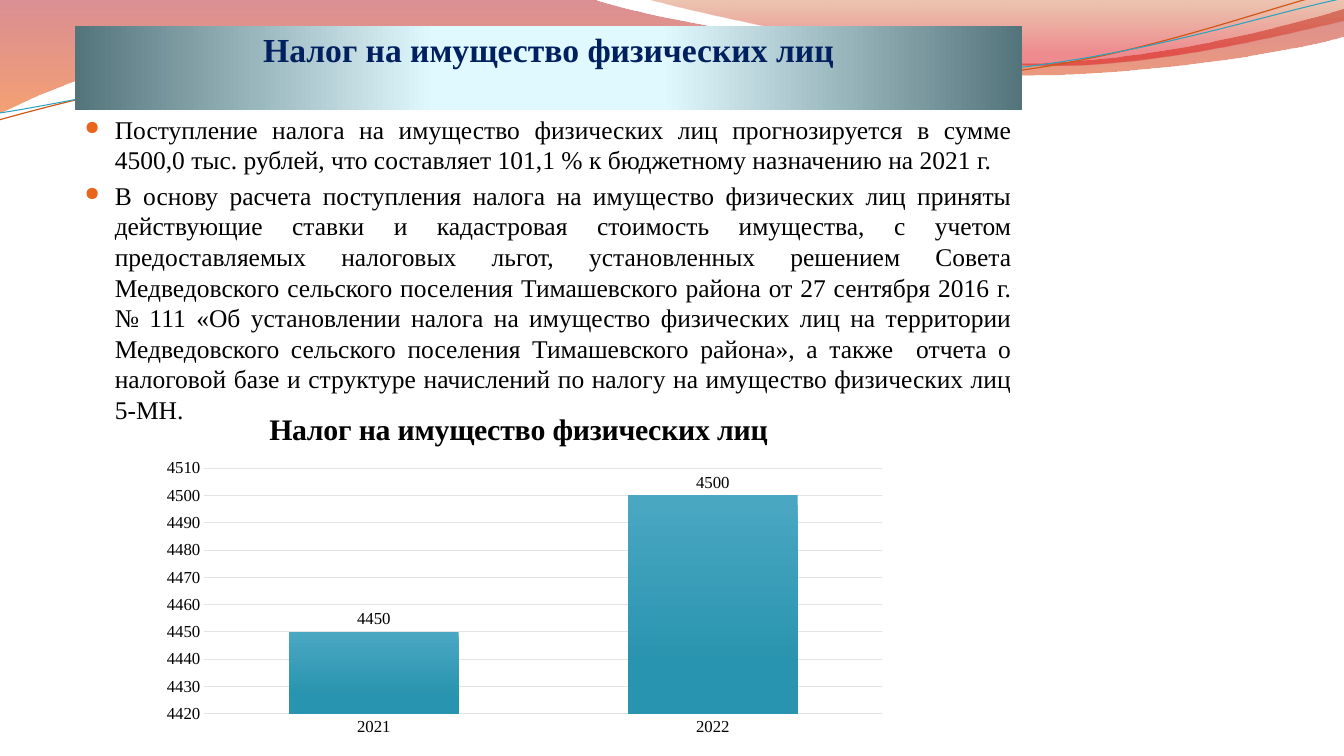
import math
from lxml import etree
from pptx import Presentation
from pptx import util as u
from pptx.chart.data import CategoryChartData
from pptx.dml.color import RGBColor
from pptx.enum import chart as charts, shapes, text
from pptx.oxml.ns import qn

COLORS = {
    "navy": "002060", "black": "000000", "bullet": "EB641B", "grid": "E3E3E3",
    "orange line": "CF5818", "teal line": "2DA2BF",
    "red": "AF0911", "orange": "EE5300", "rust": "C24400", "scarlet": "DC000B",
    "band edge": "54747B", "band middle": "E0F9FF",
    "bar top": "4AA7C2", "bar bottom": "2994AF",
}
FONT = "Times New Roman"
TITLE = "Налог на имущество физических лиц"


def style_font(font, size, color="black", bold=False):
    font.name, font.size, font.bold = FONT, u.Pt(size), bold
    font.color.rgb = RGBColor.from_string(COLORS[color])


def fill_gradient(fill, element, stops, angle):
    """Fill with (position %, colour name, opacity %) stops; element holds the fill."""
    fill.gradient()
    fill.gradient_angle = angle
    stop_list = element.find(".//" + qn("a:gsLst"))
    for stop in list(stop_list):
        stop_list.remove(stop)
    for position, color, opacity in stops:
        stop = etree.SubElement(stop_list, qn("a:gs"), pos=str(position * 1000))
        rgb = etree.SubElement(stop, qn("a:srgbClr"), val=COLORS[color])
        if opacity < 100:
            etree.SubElement(rgb, qn("a:alpha"), val=str(opacity * 1000))


presentation = Presentation()
presentation.slide_width = u.Inches(13.33)
presentation.slide_height = u.Inches(7.5)
column = presentation.slide_width / 13.33
row = presentation.slide_height / 7.5
slide = presentation.slides.add_slide(presentation.slide_layouts[6])

# Waves: start, segments (one point is a line, three a cubic curve), gradient, outline.
waves = [
    ((0, 0), [[(5.87, -0.01)], [(6.34, 0.17), (8.85, 0.63), (10.11, 0.63)],
              [(11.38, 0.63), (12.78, 0.26), (13.33, 0.09)], [(13.35, 0.36)],
              [(13.11, 0.44), (11.6, 0.76), (9.94, 0.75)],
              [(8.29, 0.75), (5.09, 0.28), (3.43, 0.34)],
              [(1.72, 0.36), (0.61, 0.83), (-0.01, 1.13)]],
     [(0, "red", 45), (100, "orange", 55)], None),
    ((6.39, -0.01), [[(6.79, 0.11), (9.09, 0.62), (10.25, 0.65)],
                     [(11.41, 0.69), (12.82, 0.32), (13.33, 0.21)], [(13.33, 0)]],
     [(0, "rust", 30), (80, "scarlet", 45)], None),
    ((-0.01, 1.19), [[(0.64, 1.01), (2.11, 0.62), (3.69, 0.55)],
                     [(5.27, 0.48), (7.9, 0.87), (9.5, 0.76)],
                     [(11.1, 0.66), (12.52, 0.08), (13.31, -0.1)]],
     None, ("orange line", 0.85)),
    ((0, 1.12), [[(0.63, 1.03), (2.18, 0.66), (3.78, 0.59)],
                 [(5.37, 0.53), (7.96, 0.82), (9.55, 0.72)],
                 [(11.15, 0.62), (12.55, 0.14), (13.34, -0.02)]],
     None, ("teal line", 0.75)),
]
center_x, center_y = 6.66, 0.58
for start, segments, stops, outline in waves:
    tilt = 0 if stops else 2.7
    cosine, sine = math.cos(math.radians(tilt)), math.sin(math.radians(tilt))
    start, *segments = [
        [(int((center_x + (x - center_x) * cosine - (y - center_y) * sine) * column),
          int((center_y + (x - center_x) * sine + (y - center_y) * cosine) * row))
         for x, y in points] for points in [[start], *segments]]
    builder = slide.shapes.build_freeform(*start[0])
    builder.add_line_segments([points[-1] for points in segments], close=stops is not None)
    wave = builder.convert_to_shape()
    wave.shadow.inherit = False
    for line, points in zip(list(wave._element.iter(qn("a:lnTo"))), segments):
        if len(points) == 3:
            line.tag = qn("a:cubicBezTo")
            line.remove(line[0])
            for x, y in points:
                etree.SubElement(line, qn("a:pt"), x=str(x - wave.left), y=str(y - wave.top))
    wave.rotation = -tilt
    if stops:
        fill_gradient(wave.fill, wave._element.spPr, stops, 270)
        wave.line.fill.background()
    else:
        wave.fill.background()
        wave.line.color.rgb = RGBColor.from_string(COLORS[outline[0]])
        wave.line.width = u.Pt(outline[1])

# Title band
left, band_width = int(0.74 * column), int(9.4 * column)
band = slide.shapes.add_shape(shapes.MSO_SHAPE.RECTANGLE, left, int(0.26 * row),
                              band_width, int(0.83 * row))
band.shadow.inherit = False
band.line.fill.background()
fill_gradient(band.fill, band._element.spPr,
              [(0, "band edge", 100), (38, "band middle", 100),
               (62, "band middle", 100), (100, "band edge", 100)], 0)
frame = band.text_frame
frame.margin_left = frame.margin_right = frame.margin_bottom = 0
frame.margin_top = int(0.03 * row)
frame.vertical_anchor = text.MSO_ANCHOR.TOP
frame.text = TITLE
frame.paragraphs[0].alignment = text.PP_ALIGN.CENTER
style_font(frame.paragraphs[0].runs[0].font, 24, "navy", True)

# Bulleted explanation
body = slide.shapes.add_textbox(left, int(1.08 * row), band_width, int(2.94 * row))
frame = body.text_frame
frame.word_wrap = True
frame.text = "\n".join([
    "Поступление налога на имущество физических лиц прогнозируется в сумме 4500,0 тыс. рублей, "
    "что составляет 101,1 % к бюджетному назначению на 2021 г.",
    "В основу расчета поступления налога на имущество физических лиц приняты действующие ставки "
    "и кадастровая стоимость имущества, с учетом предоставляемых налоговых льгот, установленных "
    "решением Совета Медведовского сельского поселения Тимашевского района от 27 сентября 2016 г. "
    "№ 111 «Об установлении налога на имущество физических лиц на территории Медведовского "
    "сельского поселения Тимашевского района», а также  отчета о налоговой базе и структуре "
    "начислений по налогу на имущество физических лиц 5-МН.",
])
indent = int(0.3 * column)
for paragraph in frame.paragraphs:
    paragraph.alignment = text.PP_ALIGN.JUSTIFY
    paragraph.space_before = u.Pt(3.6)
    style_font(paragraph.runs[0].font, 18.2)
    properties = paragraph._p.get_or_add_pPr()
    properties.set("marL", str(indent))
    properties.set("indent", str(-indent))
    bullet_color = etree.SubElement(properties, qn("a:buClr"))
    etree.SubElement(bullet_color, qn("a:srgbClr"), val=COLORS["bullet"])
    etree.SubElement(properties, qn("a:buSzPct"), val="75000")
    etree.SubElement(properties, qn("a:buChar"), char="●")

# Tax chart
data = CategoryChartData(number_format="0")
data.categories = ["2021", "2022"]
data.add_series(TITLE, [4450, 4500])
chart = slide.shapes.add_chart(charts.XL_CHART_TYPE.COLUMN_CLUSTERED, int(1.51 * column),
                               int(3.88 * row), int(7.39 * column), int(3.48 * row), data).chart
chart.has_legend = False
chart.font.name, chart.font.size = "Cambria", u.Pt(10)
chart.has_title = True
chart.chart_title.include_in_layout = False
chart.chart_title.text_frame.text = TITLE
style_font(chart.chart_title.text_frame.paragraphs[0].runs[0].font, 21.3, bold=True)

for axis in (chart.category_axis, chart.value_axis):
    axis.major_tick_mark = axis.minor_tick_mark = charts.XL_TICK_MARK.NONE
    style_font(axis.tick_labels.font, 12)
values = chart.value_axis
values.minimum_scale, values.maximum_scale, values.major_unit = 4420, 4510, 10
values.format.line.fill.background()
for line in (chart.category_axis.format.line, values.major_gridlines.format.line):
    line.color.rgb = RGBColor.from_string(COLORS["grid"])
    line.width = u.Pt(0.75)

plot = chart.plots[0]
plot.gap_width, plot.overlap, plot.vary_by_categories = 100, -24, False
series = plot.series[0]
fill_gradient(series.format.fill, series._element,
              [(0, "bar top", 100), (78, "bar bottom", 100)], 270)
labels = series.data_labels
labels.show_value = True
labels.position = charts.XL_LABEL_POSITION.OUTSIDE_END
style_font(labels.font, 12)

# Title and plot positions as shares of the chart
for part, index, settings in (
    (chart.chart_title._element, 1, {"xMode": "edge", "yMode": "edge", "x": 0.15, "y": 0.04}),
    (chart._chartSpace.chart.plotArea, 0, {"layoutTarget": "inner", "xMode": "edge",
                                           "yMode": "edge", "x": 0.07, "y": 0.22,
                                           "w": 0.91, "h": 0.7}),
):
    for layout in part.findall(qn("c:layout")):
        part.remove(layout)
    layout = etree.Element(qn("c:layout"))
    manual = etree.SubElement(layout, qn("c:manualLayout"))
    for name, value in settings.items():
        etree.SubElement(manual, qn("c:" + name), val=str(value))
    part.insert(index, layout)

presentation.save("out.pptx")
